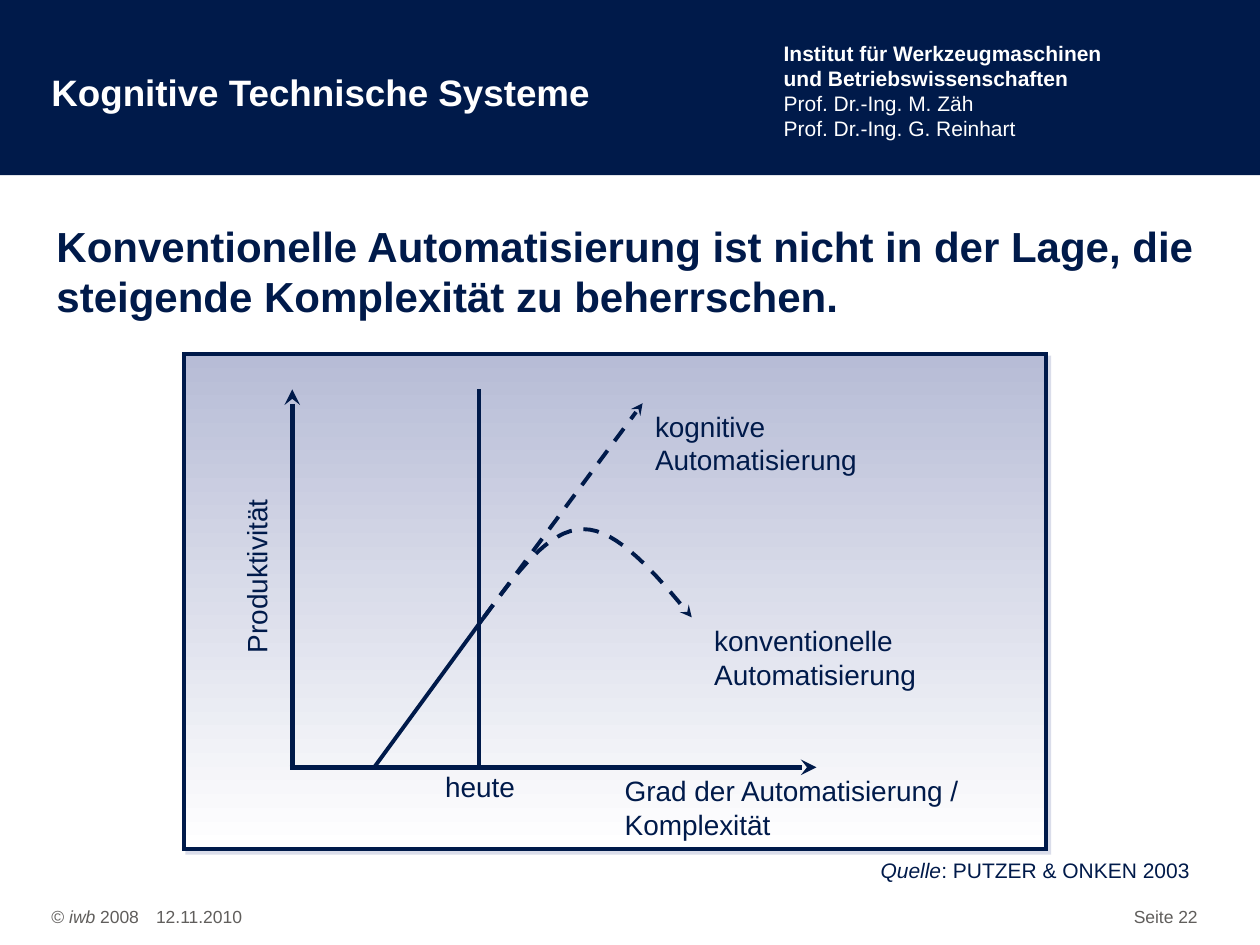
import pptx
import pptx.util
import pptx.dml.color
import pptx.enum.dml
import pptx.enum.shapes
import pptx.enum.text
import pptx.oxml
from pptx.oxml.ns import nsdecls

Inches = pptx.util.Inches
Pt = pptx.util.Pt
NAVY, LAVENDER, WHITE, GREY = "001A4A", "B7BCD6", "FFFFFF", "605E5C"


def rgb(value):
    return pptx.dml.color.RGBColor.from_string(value)


def add_text(slide, box, paragraphs, size, color=NAVY, bold=False, center=False,
             middle=False, inset=True, rotation=0):
    label = slide.shapes.add_textbox(*map(Inches, box))
    label.rotation = rotation
    frame = label.text_frame
    frame.word_wrap = True
    if middle:
        frame.vertical_anchor = pptx.enum.text.MSO_ANCHOR.MIDDLE
    if not inset:
        frame.margin_left = frame.margin_top = frame.margin_right = frame.margin_bottom = 0
    for index, content in enumerate(paragraphs):
        paragraph = frame.add_paragraph() if index else frame.paragraphs[0]
        if center:
            paragraph.alignment = pptx.enum.text.PP_ALIGN.CENTER
        paragraph.font.name = "Arial"
        paragraph.font.size = Pt(size)
        paragraph.font.color.rgb = rgb(color)
        paragraph.font.bold = bold
        paragraph.add_run().text = content
    return frame


def add_italic_text(slide, box, pieces, italic_index, size, color):
    paragraph = add_text(slide, box, pieces[:1], size, color).paragraphs[0]
    for piece in pieces[1:]:
        paragraph.add_run().text = piece
    paragraph.runs[italic_index].font.italic = True


def style_line(shape, width, dashed=False, arrow=False):
    shape.line.color.rgb = rgb(NAVY)
    shape.line.width = Pt(width)
    if dashed:
        shape.line.dash_style = pptx.enum.dml.MSO_LINE.DASH
    outline = shape.line._get_or_add_ln()
    outline.append(pptx.oxml.parse_xml(f'<a:miter {nsdecls("a")} lim="800000"/>'))
    if arrow:
        outline.append(pptx.oxml.parse_xml(f'<a:tailEnd {nsdecls("a")} type="stealth"/>'))


def add_line(slide, start, end, width, dashed=False, arrow=False):
    line = slide.shapes.add_connector(
        pptx.enum.shapes.MSO_CONNECTOR.STRAIGHT, *map(Inches, start + end))
    line._element.spPr.append(pptx.oxml.parse_xml(f'<a:effectLst {nsdecls("a")}/>'))
    style_line(line, width, dashed, arrow)


def bezier(points, steps=16):
    for step in range(1, steps + 1):
        t = step / steps
        weights = ((1 - t) ** 3, 3 * t * (1 - t) ** 2, 3 * t * t * (1 - t), t ** 3)
        yield tuple(Inches(sum(w * p[axis] for w, p in zip(weights, points)))
                    for axis in (0, 1))


def add_curve(slide, start, segments):
    vertices = []
    origin = start
    for segment in segments:
        vertices.extend(bezier((origin,) + segment))
        origin = segment[-1]
    builder = slide.shapes.build_freeform(*map(Inches, start))
    builder.add_line_segments(vertices, close=False)
    curve = builder.convert_to_shape()
    curve.shadow.inherit = False
    curve.fill.background()
    style_line(curve, 2.25, dashed=True, arrow=True)


def add_header(slide, left, top, width, height):
    band = slide.shapes.add_shape(pptx.enum.shapes.MSO_SHAPE.RECTANGLE,
                                  *map(Inches, (left, top, width, height)))
    band.shadow.inherit = False
    band.fill.solid()
    band.fill.fore_color.rgb = rgb(NAVY)
    band.line.fill.background()
    add_text(slide, (left + 0.31, top + 0.33, 5.67, 0.79),
             ["Kognitive Technische Systeme"], 21, WHITE, bold=True, middle=True)
    institute = add_text(slide, (left + 6.22, top + 0.32, 2.64, 0.8),
                         ["Institut für Werkzeugmaschinen", "und Betriebswissenschaften",
                          "Prof. Dr.-Ing. M. Zäh", "Prof. Dr.-Ing. G. Reinhart"],
                         12, WHITE, inset=False)
    for paragraph in institute.paragraphs[:2]:
        paragraph.font.bold = True


def add_panel(slide, box):
    panel = slide.shapes.add_shape(pptx.enum.shapes.MSO_SHAPE.RECTANGLE, *map(Inches, box))
    panel.shadow.inherit = False
    panel.fill.gradient()
    panel.fill.gradient_angle = 270
    for stop, color, position in zip(panel.fill.gradient_stops, (LAVENDER, WHITE), (0, 1)):
        stop.color.rgb = rgb(color)
        stop.position = position
    style_line(panel, 2.25)
    panel._element.spPr.effectLst.append(pptx.oxml.parse_xml(
        f'<a:outerShdw {nsdecls("a")} blurRad="0" dist="{Pt(2.8)}" dir="2700000" '
        f'algn="ctr" rotWithShape="0"><a:srgbClr val="{LAVENDER}">'
        '<a:alpha val="50000"/></a:srgbClr></a:outerShdw>'))


def add_diagram(slide, left, top, width, height):
    def at(x, y):
        return left + x, top + y

    add_panel(slide, (left, top, width, height))
    axis_y, peak_y = 3.28, 0.28
    today = at(2.38, 2.09)
    add_line(slide, at(0.84, axis_y), at(5.02, axis_y), 3, arrow=True)
    add_line(slide, at(0.86, axis_y), at(0.86, peak_y), 3, arrow=True)
    add_line(slide, at(1.51, axis_y), today, 2.25)
    add_line(slide, today, at(3.64, 0.39), 2.25, dashed=True, arrow=True)
    add_curve(slide, today, [
        (at(2.64, 1.74), at(2.89, 1.39), at(3.17, 1.39)),
        (at(3.44, 1.39), at(3.74, 1.74), at(4.03, 2.09))])
    add_line(slide, at(2.34, axis_y), at(2.34, peak_y), 2.25)

    add_text(slide, at(-0.8, 1.58) + (2.75, 0.37), ["Produktivität"], 16,
             center=True, rotation=270)
    add_text(slide, at(1.8, 3.25) + (1.1, 0.37), ["heute"], 16, center=True)
    for x, y, label_width, label in (
            (3.4, 3.28, 3.03, "Grad der Automatisierung / Komplexität"),
            (4.11, 2.09, 1.83, "konventionelle Automatisierung"),
            (3.64, 0.39, 2.52, "kognitive Automatisierung")):
        add_text(slide, at(x, y) + (label_width, 0.64), [label], 16)


def add_footer(slide, left, top, height):
    add_italic_text(slide, (left + 0.31, top, 1.02, height),
                    ["© ", "iwb", " 2008"], 1, 10, GREY)
    for x, width, label in ((1.14, 1.65, "12.11.2010"), (8.9, 1.1, "Seite 22")):
        add_text(slide, (left + x, top, width, height), [label], 10, GREY)


def main():
    deck = pptx.Presentation()
    deck.slide_width, deck.slide_height = Inches(10), Inches(7.5)
    slide = deck.slides.add_slide(deck.slide_layouts[6])
    add_header(slide, 0, 0, 10, 1.39)
    add_text(slide, (0.35, 1.7, 9.33, 0.9),
             ["Konventionelle Automatisierung ist nicht in der Lage, "
              "die steigende Komplexität zu beherrschen."], 24, bold=True)
    add_diagram(slide, 1.46, 2.81, 6.84, 3.93)
    add_italic_text(slide, (6.89, 6.76, 2.68, 0.3),
                    ["Quelle", ": PUTZER & ONKEN 2003"], 0, 12, NAVY)
    add_footer(slide, 0, 7.14, 0.27)
    deck.save("out.pptx")


if __name__ == "__main__":
    main()
